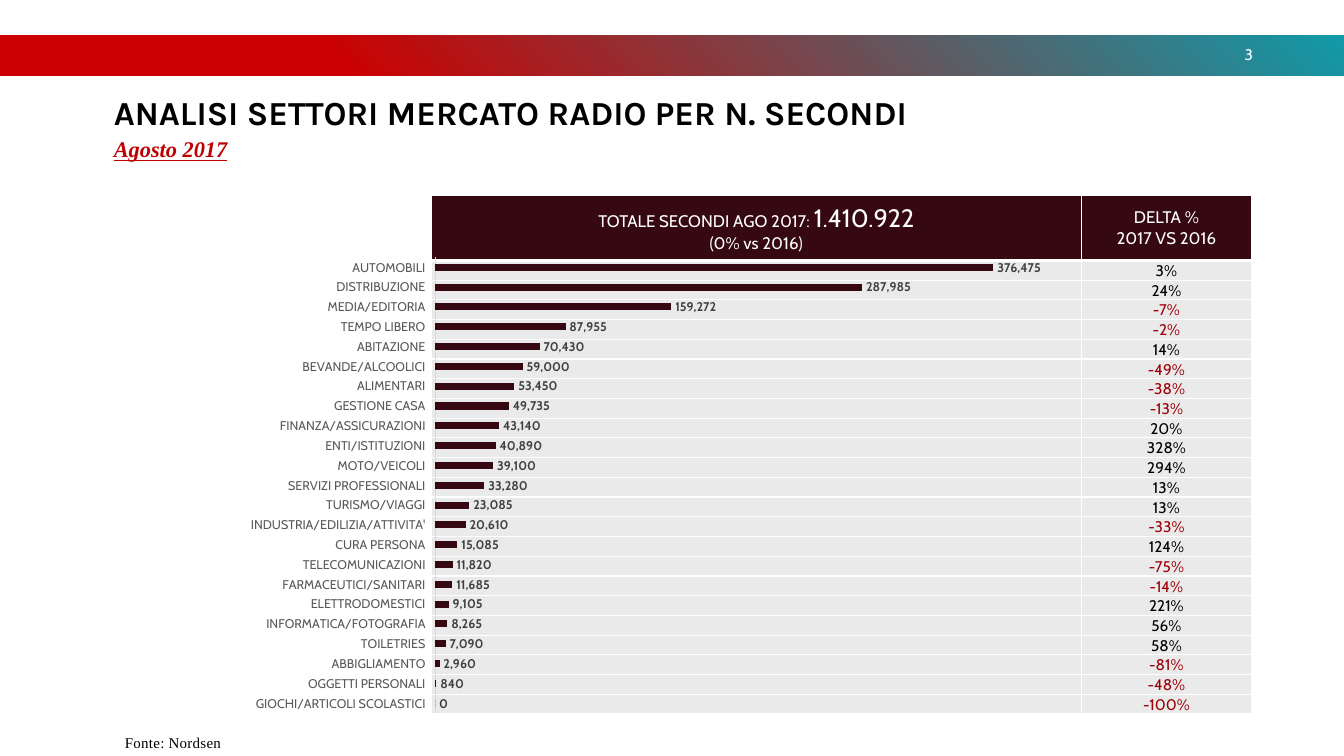
from lxml import etree
from pptx import Presentation
from pptx.chart.data import CategoryChartData
from pptx.dml.color import RGBColor
from pptx.enum.chart import XL_CHART_TYPE, XL_LABEL_POSITION, XL_TICK_LABEL_POSITION, XL_TICK_MARK
from pptx.enum.shapes import MSO_SHAPE
from pptx.enum.text import MSO_ANCHOR, PP_ALIGN
from pptx.oxml import parse_xml
from pptx.oxml.ns import nsdecls, qn
from pptx.util import Cm, Pt

BAR_CHART = XL_CHART_TYPE.BAR_CLUSTERED
OUTSIDE_END = XL_LABEL_POSITION.OUTSIDE_END
LABELS_LOW = XL_TICK_LABEL_POSITION.LOW
NO_TICKS = XL_TICK_MARK.NONE
RECTANGLE = MSO_SHAPE.RECTANGLE
MIDDLE, BOTTOM = MSO_ANCHOR.MIDDLE, MSO_ANCHOR.BOTTOM
LEFT, CENTER, RIGHT = PP_ALIGN.LEFT, PP_ALIGN.CENTER, PP_ALIGN.RIGHT

BLACK = RGBColor(0x00, 0x00, 0x00)
WHITE = RGBColor(0xFF, 0xFF, 0xFF)
RED = RGBColor(0xCC, 0x00, 0x00)
TEAL = RGBColor(0x11, 0x9A, 0xA8)
MAROON = RGBColor(0x36, 0x08, 0x12)
SUBTITLE_RED = RGBColor(0xC0, 0x00, 0x00)
NEGATIVE_RED = RGBColor(0x9C, 0x00, 0x06)
ROW_GRAY = RGBColor(0xEA, 0xEA, 0xEA)
AXIS_GRAY = RGBColor(0xD9, 0xD9, 0xD9)
CATEGORY_GRAY = RGBColor(0x59, 0x59, 0x59)
VALUE_GRAY = RGBColor(0x40, 0x40, 0x40)

SECTORS = [
    ("AUTOMOBILI", 376475, 3),
    ("DISTRIBUZIONE", 287985, 24),
    ("MEDIA/EDITORIA", 159272, -7),
    ("TEMPO LIBERO", 87955, -2),
    ("ABITAZIONE", 70430, 14),
    ("BEVANDE/ALCOOLICI", 59000, -49),
    ("ALIMENTARI", 53450, -38),
    ("GESTIONE CASA", 49735, -13),
    ("FINANZA/ASSICURAZIONI", 43140, 20),
    ("ENTI/ISTITUZIONI", 40890, 328),
    ("MOTO/VEICOLI", 39100, 294),
    ("SERVIZI PROFESSIONALI", 33280, 13),
    ("TURISMO/VIAGGI", 23085, 13),
    ("INDUSTRIA/EDILIZIA/ATTIVITA'", 20610, -33),
    ("CURA PERSONA", 15085, 124),
    ("TELECOMUNICAZIONI", 11820, -75),
    ("FARMACEUTICI/SANITARI", 11685, -14),
    ("ELETTRODOMESTICI", 9105, 221),
    ("INFORMATICA/FOTOGRAFIA", 8265, 56),
    ("TOILETRIES", 7090, 58),
    ("ABBIGLIAMENTO", 2960, -81),
    ("OGGETTI PERSONALI", 840, -48),
    ("GIOCHI/ARTICOLI SCOLASTICI", 0, -100),
]


def write(paragraph, text, size=12, color=BLACK, font="Cabin", align=LEFT,
          bold=False, italic=False, underline=False):
    paragraph.alignment = align
    run = paragraph.add_run()
    run.text = text
    run.font.size = Pt(size)
    run.font.name = font
    run.font.color.rgb = color
    run.font.bold = bold
    run.font.italic = italic
    run.font.underline = underline
    return run


def format_cell(cell, fill, anchor, side, top, bottom, bottom_line=1):
    cell.margin_left = cell.margin_right = Cm(side)
    cell.margin_top, cell.margin_bottom = Cm(top), Cm(bottom)
    cell.vertical_anchor = anchor
    properties = cell._tc.get_or_add_tcPr()
    for edge, width in (("L", 1), ("R", 1), ("T", 1), ("B", bottom_line)):
        properties.append(parse_xml(
            f'<a:ln{edge} {nsdecls("a")} w="{Pt(width)}"><a:solidFill>'
            f'<a:srgbClr val="{WHITE}"/></a:solidFill></a:ln{edge}>'))
    cell.fill.solid()
    cell.fill.fore_color.rgb = fill


presentation = Presentation()
presentation.slide_width, presentation.slide_height = Cm(33.87), Cm(19.05)
slide = presentation.slides.add_slide(presentation.slide_layouts[6])
shapes = slide.shapes

banner = shapes.add_shape(RECTANGLE, Cm(0), Cm(0.89), Cm(33.87), Cm(1.02))
banner.shadow.inherit = False
banner.line.fill.background()
banner.fill.gradient()
for stop, position, color in zip(banner.fill.gradient_stops, (0.25, 1), (RED, TEAL)):
    stop.position = position
    stop.color.rgb = color
linear = banner._element.spPr.find(".//" + qn("a:lin"))
linear.getparent().replace(linear, parse_xml(
    f'<a:path {nsdecls("a")} path="circle"><a:fillToRect t="100000" r="100000"/></a:path>'))

source = shapes.add_textbox(Cm(2.9), Cm(18.34), Cm(3.73), Cm(0.71)).text_frame
source.word_wrap = True
source.vertical_anchor = BOTTOM
source.paragraphs[0].space_before = Pt(3)
source_run = write(source.paragraphs[0], "Fonte: Nordsen", size=10.7, font="Times New Roman")
source_run._r.get_or_add_rPr().set("spc", "20")

table = shapes.add_table(len(SECTORS) + 1, 2, Cm(10.87), Cm(4.93), Cm(20.67), Cm(12.79)).table
table.first_row = table.horz_banding = False
table.columns[0].width, table.columns[1].width = Cm(16.38), Cm(4.29)
for row in table.rows:
    row.height = Cm(0.49)
table.rows[0].height = Cm(1.52)

total_cell, delta_cell = table.cell(0, 0), table.cell(0, 1)
for cell in (total_cell, delta_cell):
    format_cell(cell, MAROON, MIDDLE, 0.33, 0.18, 0.18, bottom_line=3)
header = {"color": WHITE, "align": CENTER}
total = total_cell.text_frame
write(total.paragraphs[0], "TOTALE SECONDI AGO 2017: ", **header)
write(total.paragraphs[0], "1.410.922", size=18, **header)
write(total.add_paragraph(), "(0% vs 2016)", **header)
delta_title = delta_cell.text_frame.paragraphs[0]
write(delta_title, "DELTA %", **header)
delta_title.add_line_break()
write(delta_title, "2017 VS 2016", **header)

for index, (sector, seconds, delta) in enumerate(SECTORS, start=1):
    bar_cell, value_cell = table.cell(index, 0), table.cell(index, 1)
    for cell in (bar_cell, value_cell):
        format_cell(cell, ROW_GRAY, BOTTOM, 0.03, 0.03, 0)
    etree.SubElement(bar_cell.text_frame.paragraphs[0]._p, qn("a:endParaRPr"), sz="900")
    write(value_cell.text_frame.paragraphs[0], f"{delta}%", size=11, align=CENTER,
          color=NEGATIVE_RED if delta < 0 else BLACK)

page_number = shapes.add_textbox(Cm(25.91), Cm(1.02), Cm(5.92), Cm(0.76)).text_frame
page_number.word_wrap = True
write(page_number.paragraphs[0], "3", size=11, color=WHITE, align=RIGHT)

title = shapes.add_textbox(Cm(2.87), Cm(2.44), Cm(23.44), Cm(1.7)).text_frame
title.word_wrap = True
title.margin_left = title.margin_right = title.margin_top = title.margin_bottom = 0
write(title.paragraphs[0], "ANALISI SETTORI MERCATO RADIO PER N. SECONDI",
      size=24, font="Karla", bold=True)
subtitle = title.add_paragraph()
subtitle.space_before = Pt(4)
write(subtitle, "Agosto 2017", size=16, color=SUBTITLE_RED, font="Times New Roman",
      bold=True, italic=True, underline=True)
for paragraph in title.paragraphs:
    paragraph.line_spacing = 0.9

chart_data = CategoryChartData(number_format="#,##0")
chart_data.categories = [sector for sector, seconds, delta in SECTORS]
chart_data.add_series("Secondi", [seconds for sector, seconds, delta in SECTORS])
chart = shapes.add_chart(BAR_CHART, Cm(6.32), Cm(6.12), Cm(20.62), Cm(12.22), chart_data).chart
chart.has_legend = chart.has_title = False
chart.font.size, chart.font.name = Pt(10), "Calibri"
chart.font.color.rgb = BLACK

category_axis, value_axis = chart.category_axis, chart.value_axis
category_axis.reverse_order = True
category_axis.major_tick_mark = category_axis.minor_tick_mark = NO_TICKS
category_axis.tick_label_position = LABELS_LOW
category_axis.format.line.color.rgb = AXIS_GRAY
category_axis.format.line.width = Pt(0.75)
value_axis.minimum_scale, value_axis.maximum_scale = 0, 400000
value_axis.has_major_gridlines = False
value_axis.visible = False

plot = chart.plots[0]
plot.gap_width = 182
plot.vary_by_categories = False
bars = plot.series[0]
bars.format.fill.solid()
bars.format.fill.fore_color.rgb = MAROON
labels = bars.data_labels
labels.show_value = True
labels.position = OUTSIDE_END
labels.number_format, labels.number_format_is_linked = "#,##0", False
for font, color, bold in ((category_axis.tick_labels.font, CATEGORY_GRAY, False),
                          (labels.font, VALUE_GRAY, True)):
    font.size, font.name, font.bold = Pt(9), "Cabin", bold
    font.color.rgb = color

plot_area = chart._chartSpace.chart.plotArea
for layout in plot_area.findall(qn("c:layout")):
    plot_area.remove(layout)
layout = etree.Element(qn("c:layout"))
manual_layout = etree.SubElement(layout, qn("c:manualLayout"))
for tag, value in (("layoutTarget", "inner"), ("xMode", "edge"), ("yMode", "edge"),
                   ("x", "0.22"), ("y", "0.03"), ("w", "0.73"), ("h", "0.94")):
    etree.SubElement(manual_layout, qn(f"c:{tag}"), val=value)
plot_area.insert(0, layout)

presentation.save("out.pptx")
